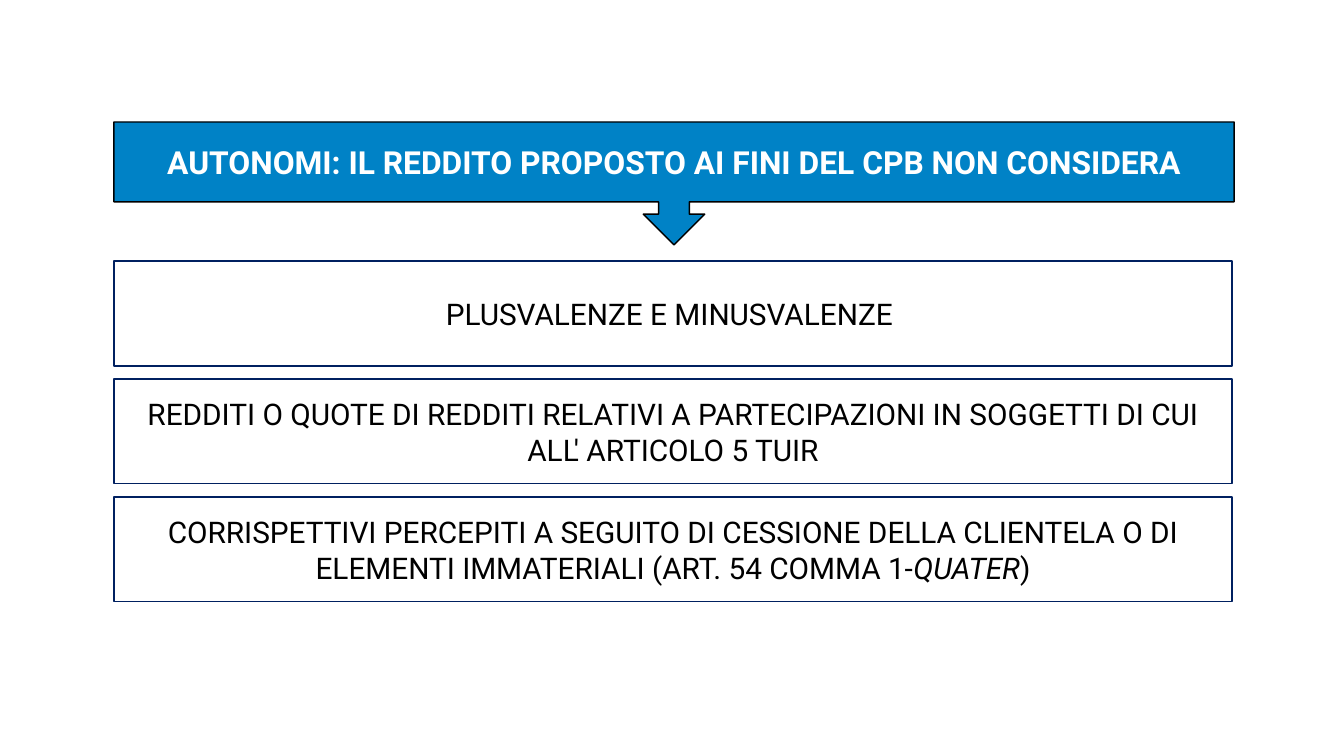
import pptx
import pptx.dml.color
import pptx.enum.shapes
import pptx.enum.text
import pptx.util
from pptx.util import Inches

RGBColor = pptx.dml.color.RGBColor
MSO_SHAPE = pptx.enum.shapes.MSO_SHAPE

WHITE = RGBColor(0xFF, 0xFF, 0xFF)
BLACK = RGBColor(0x00, 0x00, 0x00)
NAVY = RGBColor(0x00, 0x20, 0x60)
BLUE = RGBColor(0x00, 0x82, 0xC6)

FONT = "Roboto"
LEFT = 1.13
ITEM_TOP = 2.59
ITEM_WIDTH = 11.09
ITEM_HEIGHT = 1.04
ITEM_STEP = 1.17

HEADING = "AUTONOMI: IL REDDITO PROPOSTO AI FINI DEL CPB NON CONSIDERA"
# Each item is a list of (text, italic) pieces.
ITEMS = [
    [("PLUSVALENZE E MINUSVALENZE ", False)],
    [("REDDITI O QUOTE DI REDDITI RELATIVI A PARTECIPAZIONI IN SOGGETTI "
      "DI CUI ALL' ARTICOLO 5 TUIR", False)],
    [("CORRISPETTIVI PERCEPITI A SEGUITO DI CESSIONE DELLA CLIENTELA O DI "
      "ELEMENTI IMMATERIALI (ART. 54 COMMA 1-", False),
     ("QUATER", True),
     (")", False)],
]


def add_box(slide, preset, top, width, height, fill, line):
    shape = slide.shapes.add_shape(
        preset, Inches(LEFT), Inches(top), Inches(width), Inches(height))
    shape.shadow.inherit = False
    shape.fill.solid()
    shape.fill.fore_color.rgb = fill
    shape.line.color.rgb = line
    shape.line.width = pptx.util.Pt(1)
    return shape


def write_centred(shape, pieces, size, color, bold=False):
    """Write (text, italic) pieces as one paragraph in the middle of a shape."""
    text_frame = shape.text_frame
    text_frame.word_wrap = True
    text_frame.vertical_anchor = pptx.enum.text.MSO_ANCHOR.MIDDLE
    paragraph = text_frame.paragraphs[0]
    paragraph.alignment = pptx.enum.text.PP_ALIGN.CENTER
    for text, italic in pieces:
        run = paragraph.add_run()
        run.text = text
        run.font.name = FONT
        run.font.size = pptx.util.Pt(size)
        run.font.color.rgb = color
        run.font.bold = bold
        run.font.italic = italic


def add_heading(slide):
    callout = add_box(slide, MSO_SHAPE.DOWN_ARROW_CALLOUT, 1.21, 11.11, 1.22,
                      BLUE, BLACK)
    write_centred(callout, [(HEADING, False)], 22.7, WHITE, bold=True)


def add_items(slide):
    for index, pieces in enumerate(ITEMS):
        box = add_box(slide, MSO_SHAPE.RECTANGLE, ITEM_TOP + index * ITEM_STEP,
                      ITEM_WIDTH, ITEM_HEIGHT, WHITE, NAVY)
        write_centred(box, pieces, 21.3, BLACK)


def main():
    presentation = pptx.Presentation()
    presentation.slide_width = Inches(13.33)
    presentation.slide_height = Inches(7.5)
    slide = presentation.slides.add_slide(presentation.slide_layouts[6])
    add_heading(slide)
    add_items(slide)
    presentation.save("out.pptx")


if __name__ == "__main__":
    main()
